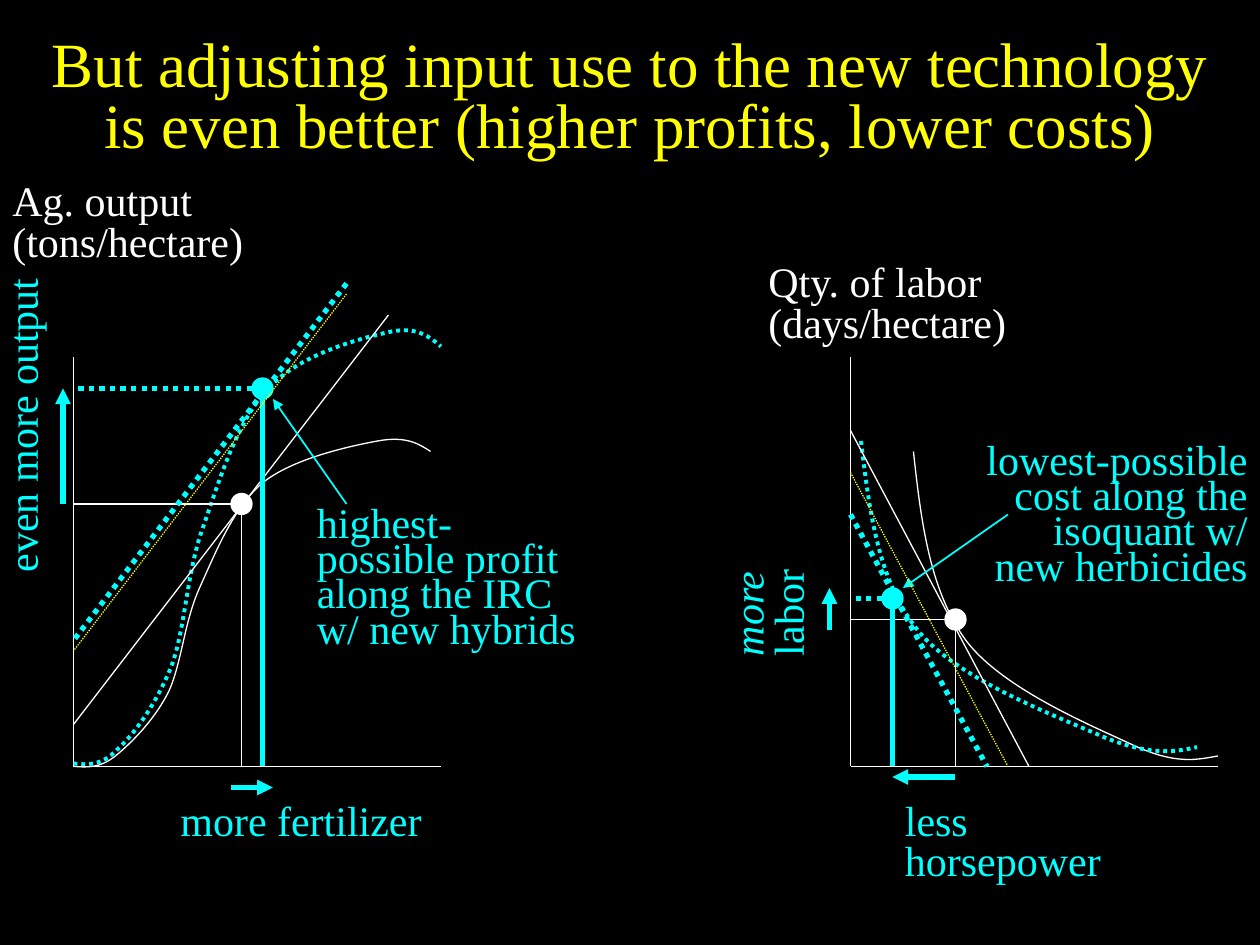
from lxml import etree
from pptx import Presentation, util as u
from pptx.dml.color import RGBColor
from pptx.enum import dml, shapes, text
from pptx.oxml.ns import qn

BLACK = RGBColor(0, 0, 0)
WHITE = RGBColor(255, 255, 255)
CYAN = RGBColor(0, 255, 255)
YELLOW = RGBColor(255, 255, 0)
FONT = "Times New Roman"
THIN, POINTER, CURVE, THICK = 0.75, 1, 2.25, 3
DOT_SIZE = 0.17
BASE = 6.08  # height of both horizontal axes
LEFT_AXIS, RIGHT_AXIS = 0.58, 6.75


def lengths(values):
    """Inches, snapped to the grid of twelfths where they lie on it."""
    snapped = ((v, round(v * 12) / 12) for v in values)
    return [u.Inches(grid if abs(grid - v) < 0.005 else v) for v, grid in snapped]


def write(box, content, size=24, color=WHITE, align=None, spacing=0.8, italic_first=False):
    """Fill a box; a list gives paragraphs, \\v breaks a line."""
    frame = box.text_frame
    for i, words in enumerate(content):
        para = frame.paragraphs[0] if i == 0 else frame.add_paragraph()
        para.text = words
        para.alignment = align
        para.line_spacing = spacing
        for run in para.runs:
            run.font.name = FONT
            run.font.size = u.Pt(size)
            run.font.color.rgb = color
            run.font.italic = italic_first and i == 0


class Diagram:
    def __init__(self, slide):
        self.slide = slide
        fill = slide.background.fill
        fill.solid()
        fill.fore_color.rgb = BLACK

    def style_line(self, shape, color, width, dotted):
        shape.line.color.rgb = color
        shape.line.width = u.Pt(width)
        if dotted:
            shape.line.dash_style = dml.MSO_LINE.ROUND_DOT

    def line(self, start, end, color=WHITE, width=THIN, dotted=False, arrow=None):
        """arrow is headEnd (at the start) or tailEnd (at the end)."""
        item = self.slide.shapes.add_connector(
            shapes.MSO_CONNECTOR.STRAIGHT, *lengths((*start, *end)))
        self.style_line(item, color, width, dotted)
        props = item._element.spPr
        if arrow:
            etree.SubElement(props.find(qn("a:ln")), qn(f"a:{arrow}"), type="triangle")
        etree.SubElement(props, qn("a:effectLst"))

    def curve(self, start, segments, color=WHITE, width=THIN, dotted=False):
        """Each segment holds two control points and an end point."""
        builder = self.slide.shapes.build_freeform(*lengths(start))
        builder.add_line_segments(
            [lengths(point) for segment in segments for point in segment], close=False)
        item = builder.convert_to_shape()
        # Merge every three straight steps into one cubic curve
        steps = list(item._element.iter(qn("a:lnTo")))
        for i in range(0, len(steps), 3):
            cubic = etree.Element(qn("a:cubicBezTo"))
            steps[i].addprevious(cubic)
            for step in steps[i:i + 3]:
                cubic.append(step[0])
                step.getparent().remove(step)
        item.fill.background()
        item.shadow.inherit = False
        self.style_line(item, color, width, dotted)

    def dot(self, left, top, color):
        item = self.slide.shapes.add_shape(
            shapes.MSO_SHAPE.OVAL, *lengths((left, top, DOT_SIZE, DOT_SIZE)))
        item.fill.solid()
        item.fill.fore_color.rgb = color
        item.shadow.inherit = False
        self.style_line(item, color, THIN, False)

    def label(self, frame, content, wrap=False, rotation=0, grow=True, **style):
        box = self.slide.shapes.add_textbox(*lengths(frame))
        box.rotation = rotation
        box.text_frame.word_wrap = wrap
        if grow:
            box.text_frame.auto_size = text.MSO_AUTO_SIZE.SHAPE_TO_FIT_TEXT
        else:
            box.text_frame.vertical_anchor = text.MSO_ANCHOR.MIDDLE
        write(box, content, **style)


def main():
    deck = Presentation()
    deck.slide_width, deck.slide_height = u.Inches(10), u.Inches(7.5)
    d = Diagram(deck.slides.add_slide(deck.slide_layouts[6]))

    # Title
    d.label((0, 0.17, 10, 1.25),
            ["But adjusting input use to the new technology\v"
             "is even better (higher profits, lower costs)"],
            wrap=True, grow=False, size=36, color=YELLOW, align=text.PP_ALIGN.CENTER)

    # Axes of both graphs
    for axis, right in ((LEFT_AXIS, 3.5), (RIGHT_AXIS, 9.67)):
        d.line((axis, 2.83), (axis, BASE))
        d.line((axis, BASE), (right, BASE))

    # Old response curve and old isoquant
    d.curve((0.58, 6.08), [
        ((0.69, 6.09), (0.79, 6.1), (0.92, 6)),
        ((1.04, 5.9), (1.22, 5.72), (1.33, 5.5)),
        ((1.44, 5.28), (1.46, 4.94), (1.58, 4.67)),
        ((1.71, 4.39), (1.85, 4.03), (2.08, 3.83)),
        ((2.32, 3.64), (2.78, 3.54), (3, 3.5)),
        ((3.22, 3.46), (3.32, 3.52), (3.42, 3.58))])
    d.curve((7.25, 3.58), [
        ((7.31, 4.14), (7.38, 4.69), (7.67, 5.08)),
        ((7.96, 5.47), (8.67, 5.76), (9, 5.92)),
        ((9.33, 6.07), (9.5, 6.03), (9.67, 6))])

    # Labels of the axes and changes
    d.label((-1.06, 3.17, 2.53, 0.42), ["even more output"], rotation=270, color=CYAN)
    d.label((1.33, 6.33, 2.13, 0.42), ["more fertilizer"], color=CYAN)
    d.label((6, 2.06, 2.09, 0.74), ["Qty. of labor", "(days/hectare)"])

    # New response curve and new isoquant
    new_curve = dict(color=CYAN, width=CURVE, dotted=True)
    d.curve((0.58, 6.06), [
        ((0.69, 6.07), (0.8, 6.08), (0.93, 5.95)),
        ((1.06, 5.83), (1.24, 5.59), (1.36, 5.29)),
        ((1.47, 5), (1.48, 4.55), (1.61, 4.19)),
        ((1.74, 3.82), (1.88, 3.34), (2.13, 3.08)),
        ((2.37, 2.82), (2.84, 2.69), (3.07, 2.64)),
        ((3.3, 2.58), (3.4, 2.67), (3.5, 2.75))], **new_curve)
    d.curve((6.83, 3.5), [
        ((6.9, 4.06), (6.97, 4.62), (7.29, 5.01)),
        ((7.61, 5.4), (8.4, 5.69), (8.76, 5.85)),
        ((9.13, 6), (9.32, 5.97), (9.5, 5.93))], **new_curve)

    # Old price lines, optima and guides to the axes
    d.line((3.08, 2.5), (LEFT_AXIS, 5.75))
    d.line((RIGHT_AXIS, 3.42), (8.17, BASE))
    d.dot(7.5, 4.83, WHITE)
    d.dot(1.83, 3.92, WHITE)
    for axis, x, y in ((LEFT_AXIS, 1.92, 4), (RIGHT_AXIS, 7.58, 4.92)):
        d.line((x, y), (x, BASE))
        d.line((x, y), (axis, y))

    # New price lines, optima and guides to the axes
    thick = dict(color=CYAN, width=THICK)
    d.label((0, 1.42, 2.03, 0.74), ["Ag. output", "(tons/hectare)"])
    d.line((2.75, 2.25), (LEFT_AXIS, 5.08), dotted=True, **thick)
    d.line((RIGHT_AXIS, 4.08), (7.83, BASE), dotted=True, **thick)
    d.dot(7, 4.67, CYAN)
    d.dot(2, 3, CYAN)
    for axis, x, y, top in ((LEFT_AXIS, 2.08, 3.08, 3.08), (RIGHT_AXIS, 7.08, 4.75, 4.83)):
        d.line((x, y), (axis, y), dotted=True, **thick)
        d.line((x, top), (x, BASE), **thick)

    # Arrows showing each change
    d.line((0.5, 4), (0.5, 3.08), arrow="tailEnd", **thick)
    d.line((1.83, 6.25), (2.17, 6.25), arrow="tailEnd", **thick)
    d.label((5.68, 4.49, 0.89, 0.74), ["more", "labor"], rotation=270,
            color=CYAN, italic_first=True)
    d.line((6.58, 5), (6.58, 4.67), arrow="tailEnd", **thick)
    d.label((7.08, 6.33, 1.76, 0.74), ["less", "horsepower"], color=CYAN)
    d.line((7.08, 6.17), (7.58, 6.17), arrow="headEnd", **thick)

    # Notes with pointers to the new optima
    note = dict(wrap=True, color=CYAN, spacing=0.7)
    d.label((2.42, 4, 2.33, 1.22),
            ["highest-possible profit along the IRC w/ new hybrids"], **note)
    d.label((7.67, 3.5, 2.33, 1.22),
            ["lowest-possible cost along the isoquant w/ new herbicides"],
            align=text.PP_ALIGN.RIGHT, **note)
    d.line((7.17, 4.67), (8, 4.08), CYAN, POINTER, arrow="headEnd")
    d.line((2.17, 3.17), (2.75, 4), CYAN, POINTER, arrow="headEnd")

    # Price lines before input use adjusts
    d.line((2.75, 2.33), (LEFT_AXIS, 5.17), YELLOW, dotted=True)
    d.line((RIGHT_AXIS, 3.75), (8, BASE), YELLOW, dotted=True)

    deck.save("out.pptx")


if __name__ == "__main__":
    main()
